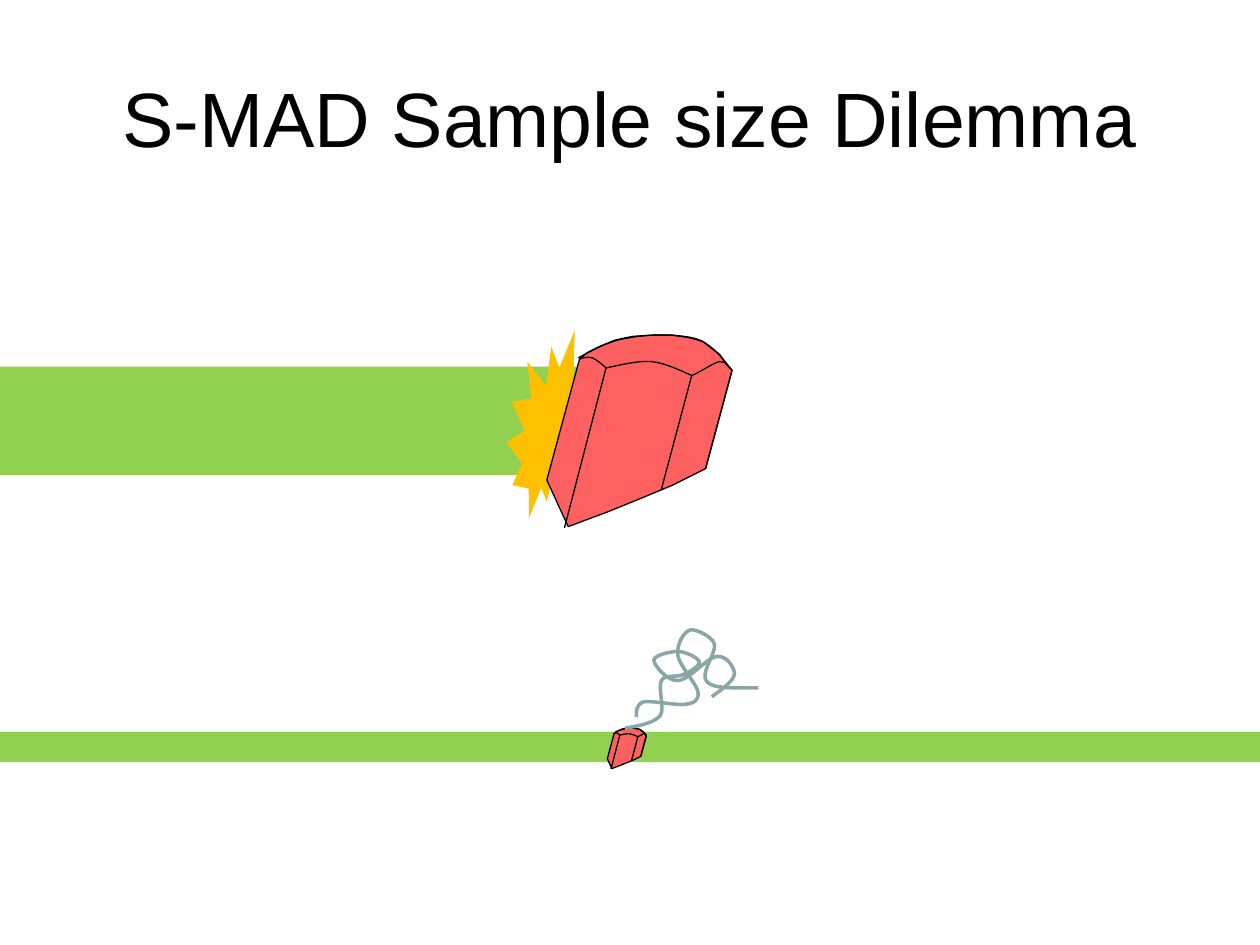
import dataclasses

import lxml.etree
import pptx
import pptx.dml.color
import pptx.enum.shapes
import pptx.enum.text
import pptx.oxml.ns
import pptx.util

Inches = pptx.util.Inches
Pt = pptx.util.Pt
RGB = pptx.dml.color.RGBColor.from_string
SHAPE = pptx.enum.shapes.MSO_SHAPE
qn = pptx.oxml.ns.qn


@dataclasses.dataclass(frozen=True)
class Theme:
    ink: str = "000000"
    track: str = "92D050"
    burst: str = "FFC000"
    wedge: str = "FF6161"
    strand: str = "8AA6A8"
    font: str = "Arial"
    title_size: int = 44
    edge_width: float = 0.75
    strand_width: float = 2


THEME = Theme()

WEDGE_WIDTH = 1.47
WEDGE_OUTLINE = [
    (0, 1.15), (0.26, 0.19), (0.32, 0.14), (0.42, 0.09), (0.54, 0.04),
    (0.68, 0.01), (0.83, 0), (1, 0), (1.13, 0.02), (1.24, 0.05),
    (1.3, 0.1), (1.37, 0.15), (1.42, 0.22), (1.47, 0.28), (1.26, 1.06),
    (1, 1.19), (0.76, 1.29), (0.49, 1.4), (0.17, 1.52),
]
WEDGE_SEAMS = [
    ((0.14, 1.53), (0.47, 0.26)),
    ((0.91, 1.22), (1.15, 0.32)),
    ((1.26, 1.06), (1.47, 0.28)),
]
WEDGE_RIMS = [
    [(0.26, 0.19), (0.28, 0.18), (0.32, 0.17), (0.36, 0.18),
     (0.39, 0.19), (0.45, 0.24), (0.47, 0.26)],
    [(0.47, 0.26), (0.53, 0.25), (0.71, 0.2), (0.83, 0.21),
     (0.94, 0.22), (1.08, 0.29), (1.15, 0.32)],
    [(1.15, 0.32), (1.19, 0.31), (1.32, 0.22), (1.37, 0.21),
     (1.42, 0.2), (1.45, 0.27), (1.47, 0.28)],
    [(0.25, 0.18), (0.38, 0.11), (0.5, 0.04), (0.66, 0.02), (0.81, -0.01),
     (1.05, -0.01), (1.19, 0.03), (1.32, 0.08), (1.39, 0.18), (1.47, 0.28)],
]
STRANDS = [
    [(0, 0.78), (0.11, 0.76), (0.23, 0.74), (0.28, 0.68), (0.32, 0.62),
     (0.26, 0.46), (0.29, 0.4), (0.32, 0.35), (0.42, 0.38), (0.47, 0.35),
     (0.52, 0.33), (0.6, 0.28), (0.59, 0.25), (0.58, 0.22), (0.48, 0.17),
     (0.42, 0.17), (0.36, 0.17), (0.23, 0.2), (0.23, 0.24), (0.23, 0.28),
     (0.34, 0.41), (0.42, 0.4), (0.51, 0.4), (0.66, 0.21), (0.73, 0.21),
     (0.81, 0.2), (0.87, 0.3), (0.87, 0.35), (0.86, 0.41), (0.77, 0.47),
     (0.69, 0.53)],
    [(0.09, 0.69), (0.09, 0.64), (0.09, 0.59), (0.15, 0.57), (0.22, 0.56),
     (0.41, 0.6), (0.48, 0.59), (0.55, 0.58), (0.59, 0.56), (0.58, 0.49),
     (0.57, 0.43), (0.43, 0.28), (0.42, 0.2), (0.41, 0.11), (0.47, 0.01),
     (0.52, 0), (0.56, -0.01), (0.69, 0.05), (0.71, 0.11), (0.73, 0.18),
     (0.59, 0.35), (0.65, 0.41), (0.7, 0.47), (0.88, 0.46), (1.06, 0.46)],
]


def apply_format(target, values):
    for name, value in values.items():
        setattr(target, name, value)


def set_line(shape, color, width):
    shape.line.color.rgb = RGB(color)
    shape.line.width = Pt(width)


def add_solid(shapes, preset, box, color):
    solid = shapes.add_shape(preset, *map(Inches, box))
    solid.shadow.inherit = False
    solid.fill.solid()
    solid.fill.fore_color.rgb = RGB(color)
    solid.line.fill.background()


def add_outline(shapes, points, color, width, closed=False):
    start, *rest = [(Inches(x), Inches(y)) for x, y in points]
    builder = shapes.build_freeform(*start)
    builder.add_line_segments(rest, close=closed)
    outline = builder.convert_to_shape()
    outline.shadow.inherit = False
    set_line(outline, color, width)
    return outline


def add_curve(shapes, points, color, width):
    curve = add_outline(shapes, points, color, width)
    curve.fill.background()
    segments = list(curve._element.iter(qn("a:lnTo")))
    for first in range(0, len(segments), 3):
        bezier = lxml.etree.Element(qn("a:cubicBezTo"))
        segments[first].addprevious(bezier)
        for segment in segments[first:first + 3]:
            bezier.append(segment[0])
            segment.getparent().remove(segment)


def add_seam(shapes, start, end):
    seam = shapes.add_connector(
        pptx.enum.shapes.MSO_CONNECTOR.STRAIGHT, *map(Inches, start + end))
    set_line(seam, THEME.ink, THEME.edge_width)
    lxml.etree.SubElement(seam._element.spPr, qn("a:effectLst"))


def add_title(slide, box, wording):
    title = slide.shapes.add_textbox(*map(Inches, box))
    frame = title.text_frame
    apply_format(frame, {
        "word_wrap": True,
        "vertical_anchor": pptx.enum.text.MSO_ANCHOR.MIDDLE,
    })
    heading = frame.paragraphs[0]
    heading.alignment = pptx.enum.text.PP_ALIGN.CENTER
    run = heading.add_run()
    run.text = wording
    apply_format(run.font, {"name": THEME.font, "size": Pt(THEME.title_size)})
    run.font.color.rgb = RGB(THEME.ink)


def add_impact(slide, box):
    left, top, width, height = box
    impact = slide.shapes.add_group_shape().shapes
    add_solid(impact, SHAPE.RECTANGLE,
              (left, top + 0.29, width - 0.21, 0.86), THEME.track)
    add_solid(impact, SHAPE.EXPLOSION2,
              (left + width - 0.79, top, 0.79, height), THEME.burst)


def add_wedge(slide, left, top, width):
    scale = width / WEDGE_WIDTH

    def place(points):
        return [(left + x * scale, top + y * scale) for x, y in points]

    wedge = slide.shapes.add_group_shape().shapes
    body = add_outline(wedge, place(WEDGE_OUTLINE), THEME.ink,
                       THEME.edge_width, closed=True)
    body.fill.solid()
    body.fill.fore_color.rgb = RGB(THEME.wedge)
    for seam in WEDGE_SEAMS:
        add_seam(wedge, *place(seam))
    for rim in WEDGE_RIMS:
        add_curve(wedge, place(rim), THEME.ink, THEME.edge_width)


def add_strands(slide, left, top):
    for strand in STRANDS:
        add_curve(slide.shapes, [(left + x, top + y) for x, y in strand],
                  THEME.strand, THEME.strand_width)


def main():
    deck = pptx.Presentation()
    apply_format(deck, {"slide_width": Inches(10), "slide_height": Inches(7.5)})
    slide = deck.slides.add_slide(deck.slide_layouts[6])
    add_impact(slide, (-0.24, 2.62, 5.05, 1.49))
    add_title(slide, (0.5, 0.3, 9, 1.25), "S-MAD Sample size Dilemma")
    add_wedge(slide, 4.34, 2.66, WEDGE_WIDTH)
    add_solid(slide.shapes, SHAPE.RECTANGLE, (-0.19, 5.81, 10.62, 0.24),
              THEME.track)
    add_wedge(slide, 4.82, 5.78, 0.31)
    add_strands(slide, 4.96, 5)
    deck.save("out.pptx")


if __name__ == "__main__":
    main()
